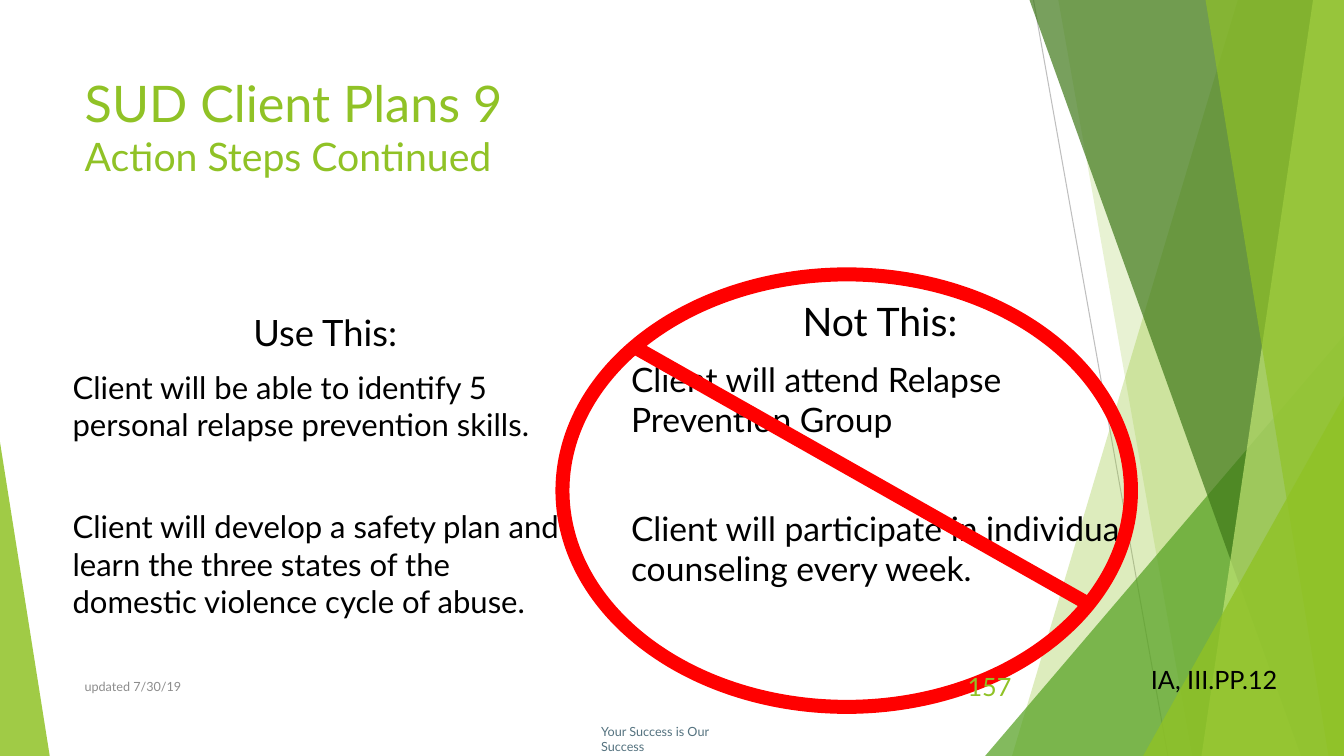
from lxml import etree
from pptx import Presentation
from pptx.dml.color import RGBColor
from pptx.enum.shapes import MSO_CONNECTOR as Connector, MSO_SHAPE as Shape
from pptx.enum.text import MSO_ANCHOR as Anchor, MSO_AUTO_SIZE as AutoSize, PP_ALIGN as Align
from pptx.oxml.ns import qn
from pptx.util import Inches, Pt

WIDTH, HEIGHT = Inches(13.333), Inches(7.5)
FONT = "Lato"
BLACK = RGBColor(0x00, 0x00, 0x00)
RED = RGBColor(0xFF, 0x00, 0x00)
GRAY = RGBColor(0x8C, 0x8C, 0x8C)
LIGHT_GRAY = RGBColor(0xBF, 0xBF, 0xBF)
SLATE = RGBColor(0x54, 0x72, 0x7F)
LIME = RGBColor(0x90, 0xC2, 0x26)
PALE_LIME = RGBColor(0xC0, 0xE4, 0x74)
GREEN = RGBColor(0x54, 0xA0, 0x21)
DARK_GREEN = RGBColor(0x3F, 0x78, 0x19)

# Ribbons: (top x, bottom x); triangles: (left, top, width, apex). Shares in percent.
FACETS = [
    ((92.1, 75.3), LIME, 30),
    ((78.75, 88.7), LIME, 20),
    ((73.3, 44.4, 26.7, 1), GREEN, 72),
    ((76.6, 96.8), DARK_GREEN, 70),
    ((97.7, 89.4), PALE_LIME, 70),
    ((89.7, 98.85), LIME, 65),
    ((85.05, 52.4, 14.95, 1), LIME, 80),
    ((0, 58.5, 3.7, 0), LIME, 85),
]

# Box in percent of the slide, heading size, body size, gap between steps, texts
COLUMNS = [
    ((4.65, 40.4, 39.1, 41.1), 25.9, 22.2, 46.6, (
        "Use This:",
        "Client will be able to identify 5 personal relapse prevention skills.",
        "Client will develop a safety plan and learn the three states of the "
        "domestic violence cycle of abuse.")),
    ((46.2, 38.7, 38.55, 45.6), 28, 24, 48.8, (
        "Not This:",
        "Client will attend Relapse Prevention Group",
        "Client will participate in individual counseling every week.")),
]

LABELS = [
    ("Your Success is Our Success", (44, 95.1, 11.9, 3.3), 9, SLATE, Align.LEFT, Anchor.TOP),
    ("updated 7/30/19", (5.55, 88.1, 51.7, 5.3), 9, GRAY, Align.LEFT, Anchor.MIDDLE),
    ("157", (70.4, 88.1, 5.6, 5.3), 18, LIME, Align.RIGHT, Anchor.MIDDLE),
    ("IA, III.PP.12", (84.9, 87.2, 11, 7.1), 18, BLACK, Align.LEFT, Anchor.TOP),
]


def scaled(*shares):
    """Turn alternating x and y percentages into slide lengths."""
    return [int((HEIGHT if i % 2 else WIDTH) * share / 100) for i, share in enumerate(shares)]


def set_values(target, values):
    for name, value in values.items():
        setattr(target, name, value)


def place(shape, box):
    set_values(shape, dict(zip(("left", "top", "width", "height"), scaled(*box))))


def fill_facet(shape, color, opacity):
    shape.shadow.inherit = False
    shape.fill.solid()
    shape.fill.fore_color.rgb = color
    shape.line.fill.background()
    color_element = shape.element.spPr.find(qn("a:solidFill"))[0]
    etree.SubElement(color_element, qn("a:alpha"), val=str(opacity * 1000))


def add_ribbon(shapes, top_x, bottom_x):
    """Add an area reaching from a slanted edge to the right side of the slide."""
    corners = [scaled(*point) for point in ((top_x, 0), (100, 0), (100, 100), (bottom_x, 100))]
    builder = shapes.build_freeform(*corners[0])
    builder.add_line_segments(corners[1:])
    return builder.convert_to_shape()


def add_triangle(shapes, left, top, width, apex):
    box = scaled(left, top, width, 100 - top)
    triangle = shapes.add_shape(Shape.ISOSCELES_TRIANGLE, *box)
    triangle.adjustments[0] = apex
    return triangle


def add_line(shapes, ends, color, width):
    line = shapes.add_connector(Connector.STRAIGHT, *scaled(*ends))
    line.line.color.rgb = color
    line.line.width = Pt(width)
    etree.SubElement(line.element.spPr, qn("a:effectLst"))


def add_backdrop(slide):
    shapes = slide.shapes.add_group_shape().shapes
    add_line(shapes, (76.9, 0, 86.9, 100), LIGHT_GRAY, 0.75)
    for geometry, color, opacity in FACETS:
        add_facet = add_ribbon if len(geometry) == 2 else add_triangle
        fill_facet(add_facet(shapes, *geometry), color, opacity)


def add_prohibition_sign(slide):
    shapes = slide.shapes.add_group_shape().shapes
    ring = shapes.add_shape(Shape.OVAL, *scaled(41.85, 36.3, 42.3, 57.2))
    ring.shadow.inherit = False
    ring.fill.background()
    ring.line.color.rgb = RED
    ring.line.width = Pt(10)
    add_line(shapes, (47.2, 45.9, 80.7, 79.6), RED, 10)


def add_run(paragraph, text, size, color):
    run = paragraph.add_run()
    run.text = text
    set_values(run.font, {"name": FONT, "size": Pt(size)})
    run.font.color.rgb = color


def prepare_frame(shape, anchor=Anchor.TOP):
    set_values(shape.text_frame, {
        "word_wrap": True, "auto_size": AutoSize.NONE, "vertical_anchor": anchor})
    return shape.text_frame


def raise_to_front(shape):
    shape.element.getparent().append(shape.element)


def fill_title(title):
    place(title, (5.55, 8.9, 70.5, 19.2))
    paragraph = prepare_frame(title).paragraphs[0]
    paragraph.alignment = Align.LEFT
    add_run(paragraph, "SUD Client Plans 9", 36, LIME)
    paragraph.add_line_break()
    add_run(paragraph, "Action Steps Continued", 28, LIME)
    raise_to_front(title)


def fill_column(body, box, heading_size, body_size, gap, texts):
    place(body, box)
    frame = prepare_frame(body)
    formats = [
        (heading_size, Align.CENTER, 0),
        (body_size, Align.LEFT, 10),
        (body_size, Align.LEFT, gap),
    ]
    for i, (text, (size, alignment, space)) in enumerate(zip(texts, formats)):
        paragraph = frame.add_paragraph() if i else frame.paragraphs[0]
        properties = paragraph._p.get_or_add_pPr()
        properties.set("marL", "0")
        properties.set("indent", "0")
        etree.SubElement(properties, qn("a:buNone"))
        set_values(paragraph, {"alignment": alignment, "space_before": Pt(space)})
        add_run(paragraph, text, size, BLACK)
    raise_to_front(body)


def add_label(slide, text, box, size, color, alignment, anchor):
    label = slide.shapes.add_textbox(*scaled(*box))
    paragraph = prepare_frame(label, anchor).paragraphs[0]
    paragraph.alignment = alignment
    add_run(paragraph, text, size, color)


def main():
    presentation = Presentation()
    set_values(presentation, {"slide_width": WIDTH, "slide_height": HEIGHT})
    slide = presentation.slides.add_slide(presentation.slide_layouts.get_by_name("Two Content"))
    title, *bodies = slide.placeholders
    add_backdrop(slide)
    fill_title(title)
    for body, column in zip(bodies, COLUMNS):
        fill_column(body, *column)
    add_prohibition_sign(slide)
    for label in LABELS:
        add_label(slide, *label)
    presentation.save("out.pptx")


if __name__ == "__main__":
    main()
